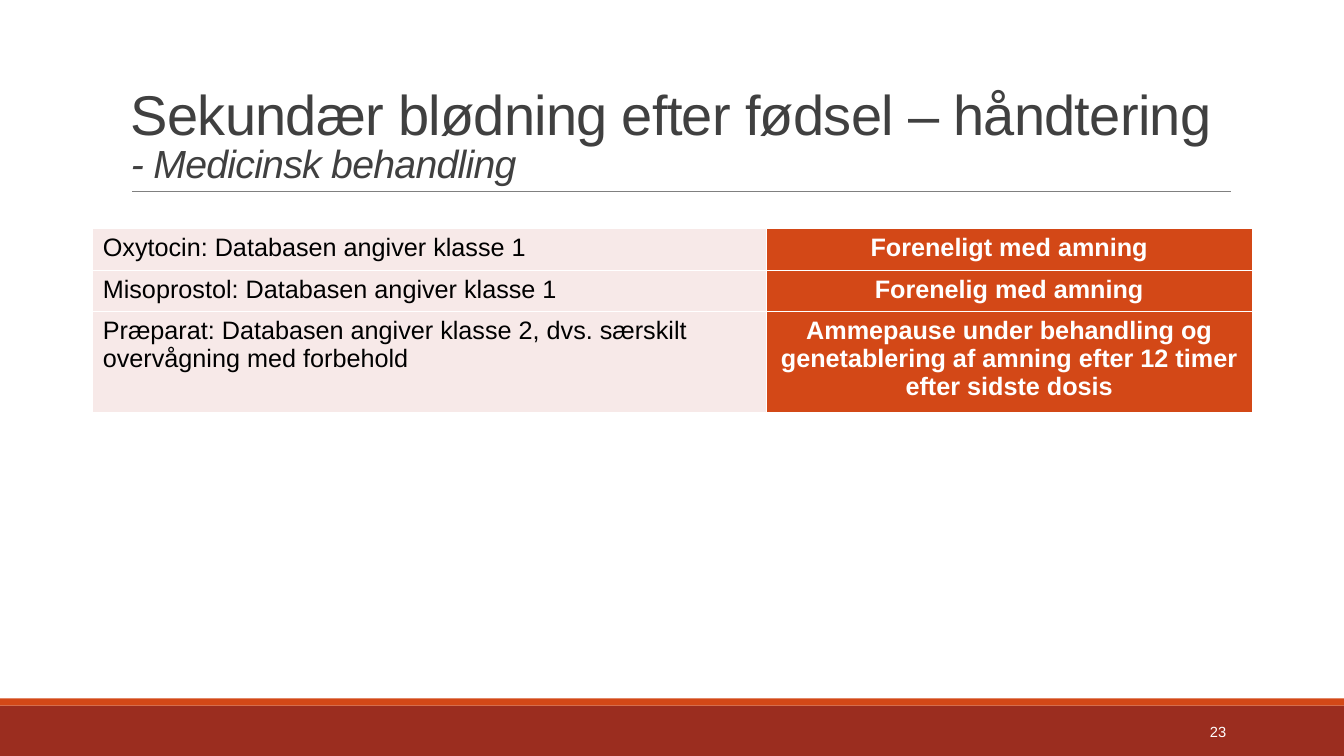
from lxml import etree
from pptx import Presentation
from pptx import util as u
from pptx.dml.color import RGBColor
from pptx.enum import shapes, text
from pptx.oxml.ns import qn

COLORS = {
    "white": "FFFFFF", "black": "000000", "title": "404040", "rule": "808080",
    "brick": "9B2D1F", "orange": "D34817", "blush": "F7E9E8",
}
WIDTH, HEIGHT = 13.33, 7.5
ADVICE = [
    ("Oxytocin: Databasen angiver klasse 1", "Foreneligt med amning"),
    ("Misoprostol: Databasen angiver klasse 1", "Forenelig med amning"),
    ("Præparat: Databasen angiver klasse 2, dvs. særskilt overvågning med forbehold",
     "Ammepause under behandling og genetablering af amning efter 12 timer "
     "efter sidste dosis"),
]


def rgb(name):
    return RGBColor.from_string(COLORS[name])


def box(*lengths):
    return [u.Inches(n) for n in lengths]


class SlideBuilder:
    """Holds the font and the slide being drawn."""

    font = "Arial"

    def __init__(self, slide):
        self.slide = slide

    def run(self, p, words, size, color, bold=False, italic=False, spacing=0):
        """Add a run; spacing is in points between characters."""
        r = p.add_run()
        r.text = words
        r.font.name, r.font.size = self.font, u.Pt(size)
        r.font.bold, r.font.italic = bold, italic
        r.font.color.rgb = rgb(color)
        if spacing:
            r.font._element.set("spc", str(round(spacing * 100)))

    def bar(self, top, height, color):
        """Draw a band across the full slide width."""
        sp = self.slide.shapes.add_shape(
            shapes.MSO_SHAPE.RECTANGLE, *box(0, top, WIDTH, height))
        sp.shadow.inherit = False
        sp.fill.solid()
        sp.fill.fore_color.rgb = rgb(color)
        sp.line.fill.background()

    def rule(self, left, right, y):
        line = self.slide.shapes.add_connector(
            shapes.MSO_CONNECTOR.STRAIGHT, *box(left, y, right, y))
        line.line.color.rgb = rgb("rule")
        line.line.width = u.Pt(0.5)
        etree.SubElement(line._element.spPr, qn("a:effectLst"))

    def textbox(self, bounds, anchor):
        """Add a wrapping text box and return its first paragraph."""
        tf = self.slide.shapes.add_textbox(*box(*bounds)).text_frame
        tf.word_wrap = True
        tf.vertical_anchor = anchor
        return tf.paragraphs[0]

    def title(self, heading, subheading):
        p = self.textbox((1.2, 0.31, 11, 1.59), text.MSO_ANCHOR.BOTTOM)
        p.line_spacing = 0.85
        self.run(p, heading, 40, "title", spacing=-0.5)
        p.add_line_break()
        self.run(p, subheading, 28, "title", italic=True, spacing=-0.5)

    def page_number(self, number):
        p = self.textbox((10.83, 7.06, 1.43, 0.4), text.MSO_ANCHOR.MIDDLE)
        p.alignment = text.PP_ALIGN.RIGHT
        self.run(p, number, 10.5, "white")

    def cell_borders(self, cell):
        tc_pr = cell._tc.get_or_add_tcPr()
        for i, side in enumerate(("lnL", "lnR", "lnT", "lnB")):
            ln = etree.Element(qn(f"a:{side}"), w=str(u.Pt(1)))
            fill = etree.SubElement(ln, qn("a:solidFill"))
            etree.SubElement(fill, qn("a:srgbClr"), val=COLORS["white"])
            tc_pr.insert(i, ln)

    def table(self, rows, left, top, widths, heights):
        table = self.slide.shapes.add_table(
            len(rows), len(widths),
            *box(left, top, sum(widths), sum(heights))).table
        for column, width in zip(table.columns, widths):
            column.width = u.Inches(width)
        for row, height, words in zip(table.rows, heights, rows):
            row.height = u.Inches(height)
            for i, (cell, label) in enumerate(zip(row.cells, words)):
                verdict = i == 1
                cell.fill.solid()
                cell.fill.fore_color.rgb = rgb("orange" if verdict else "blush")
                self.cell_borders(cell)
                p = cell.text_frame.paragraphs[0]
                p.alignment = (text.PP_ALIGN.CENTER if verdict
                               else text.PP_ALIGN.LEFT)
                self.run(p, label, 18, "white" if verdict else "black",
                         bold=verdict)


def main():
    prs = Presentation()
    prs.slide_width, prs.slide_height = box(WIDTH, HEIGHT)
    s = SlideBuilder(prs.slides.add_slide(prs.slide_layouts[6]))
    s.bar(7, 0.5, "brick")
    s.bar(6.93, 0.07, "orange")
    s.rule(1.31, 12.21, 1.9)
    s.title("Sekundær blødning efter fødsel – håndtering",
            "- Medicinsk behandling")
    s.table(ADVICE, 0.92, 2.27, (6.68, 4.82), (0.41, 0.41, 0.93))
    s.page_number("23")
    prs.save("out.pptx")


if __name__ == "__main__":
    main()
